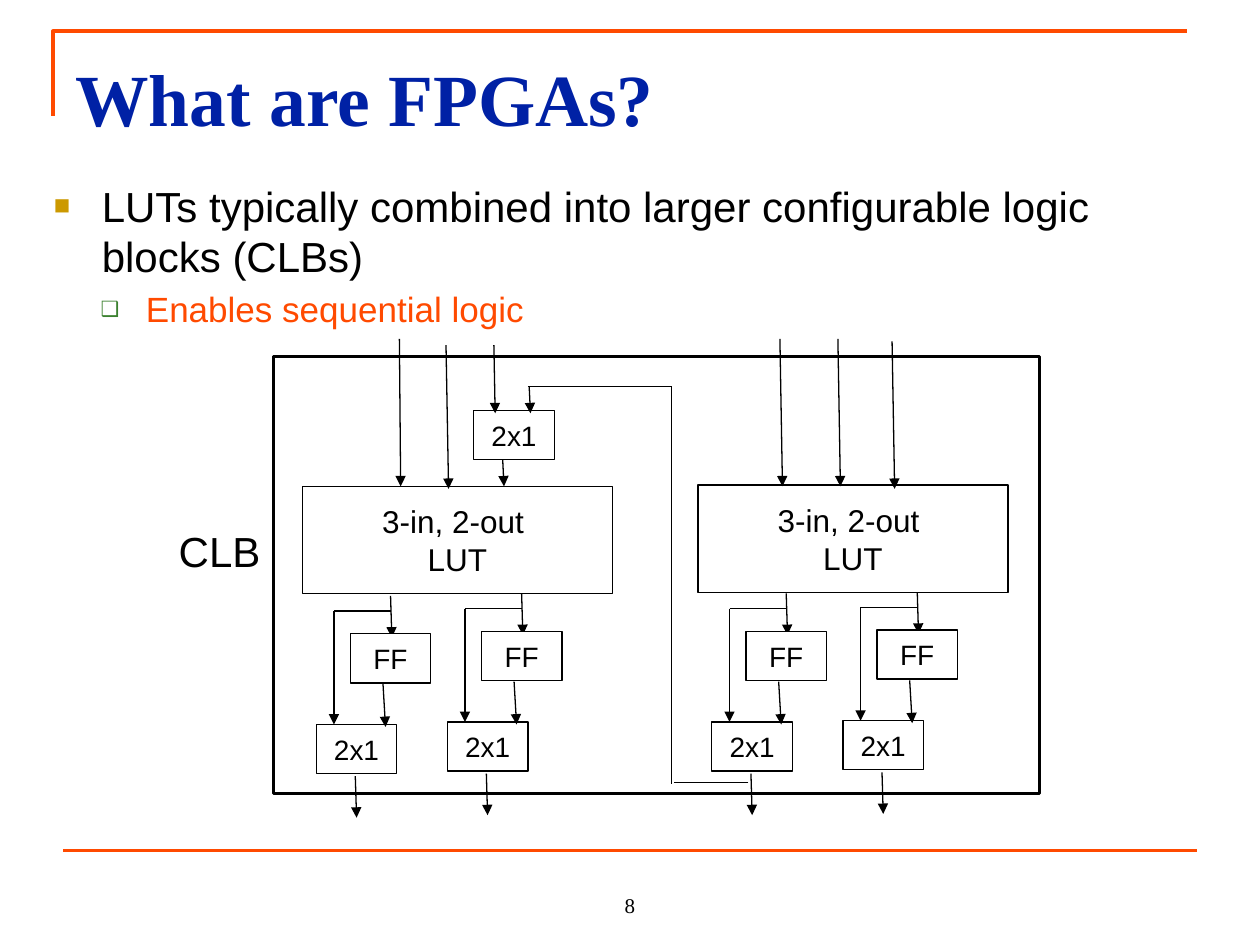
from typing import NamedTuple

from lxml import etree
from pptx import Presentation
from pptx import util as u
from pptx.dml.color import RGBColor
from pptx.enum import shapes, text
from pptx.oxml import ns

BLACK = RGBColor(0x00, 0x00, 0x00)
WHITE = RGBColor(0xFF, 0xFF, 0xFF)
ORANGE = RGBColor(0xFF, 0x4A, 0x00)
BLUE = RGBColor(0x00, 0x21, 0xA5)
GOLD = RGBColor(0xCC, 0x99, 0x00)
GREEN = RGBColor(0x3B, 0x81, 0x2F)

TITLE = {"name": "Times New Roman", "size": u.Pt(42), "bold": True}
BODY = {"name": "Arial", "size": u.Pt(24)}
DETAIL = {"name": "Arial", "size": u.Pt(20)}
LUT_FONT = {"name": "Arial", "size": u.Pt(18)}
BLOCK_FONT = {"name": "Arial", "size": u.Pt(16)}
NUMBER = {"name": "Times New Roman", "size": u.Pt(12)}

BLOCK_SIZE = (0.64, 0.39)
LUT_SIZE = (2.46, 0.85)


class Wire(NamedTuple):
    x1: float
    y1: float
    x2: float
    y2: float
    arrow: bool = True


class Bullet(NamedTuple):
    words: str
    font: dict
    color: RGBColor
    mark: str
    mark_color: RGBColor
    mark_percent: int
    margin: float
    indent: float
    level: int
    before: float


BULLETS = [
    Bullet("LUTs typically combined into larger configurable logic blocks (CLBs)",
           BODY, BLACK, "■", GOLD, 65, 0.38, -0.38, 0, 0),
    Bullet("Enables sequential logic",
           DETAIL, ORANGE, "❑", GREEN, 60, 0.73, -0.36, 1, 4),
]

# Top left corners of the look-up tables and of the flip-flop stages
LUTS = [(2.4, 3.86), (5.54, 3.85)]
STAGES = [(2.78, 5.03), (3.82, 5.01), (5.92, 5.01), (6.96, 5.0)]

# Wires of one stage, measured from its flip-flop's corner
STAGE_INPUT = Wire(0.32, -0.3, 0.33, 0.03)
STAGE_WIRES = [
    Wire(-0.13, -0.18, -0.13, 0.72),
    Wire(-0.13, -0.18, 0.32, -0.18, False),
    Wire(0.26, 0.4, 0.28, 0.74),
    Wire(0.04, 1.13, 0.05, 1.46),
]
INPUT_WIRES = [
    Wire(3.17, 2.69, 3.18, 3.86),
    Wire(3.54, 2.74, 3.56, 3.88),
    Wire(3.92, 2.74, 3.93, 3.28),
    Wire(3.99, 3.65, 4, 3.86),
    Wire(6.19, 2.69, 6.21, 3.86),
    Wire(6.65, 2.69, 6.67, 3.86),
    Wire(7.08, 2.71, 7.1, 3.88),
]
FEEDBACK_WIRES = [
    Wire(5.94, 6.21, 5.35, 6.21, False),
    Wire(5.33, 3.07, 5.33, 6.22, False),
    Wire(4.19, 3.07, 5.33, 3.07, False),
    Wire(4.2, 3.07, 4.21, 3.28),
]


def apply(target, values: dict) -> None:
    for name, value in values.items():
        setattr(target, name, value)


def write(para, words: str, font: dict, color: RGBColor) -> None:
    span = para.add_run()
    span.text = words
    apply(span.font, font)
    span.font.color.rgb = color


def add_text_box(page, left: float, top: float, width: float, height: float, **values):
    box = page.shapes.add_textbox(*map(u.Inches, (left, top, width, height)))
    apply(box.text_frame, {"word_wrap": True, **values})
    return box.text_frame


def add_bullet(para, item: Bullet) -> None:
    props = para._p.get_or_add_pPr()
    props.set("marL", str(u.Inches(item.margin)))
    props.set("indent", str(u.Inches(item.indent)))
    color = etree.SubElement(props, ns.qn("a:buClr"))
    etree.SubElement(color, ns.qn("a:srgbClr"), val=str(item.mark_color))
    etree.SubElement(props, ns.qn("a:buSzPct"), val=str(item.mark_percent * 1000))
    etree.SubElement(props, ns.qn("a:buFont"), typeface="Arial")
    etree.SubElement(props, ns.qn("a:buChar"), char=item.mark)
    apply(para, {"level": item.level, "space_before": u.Pt(item.before)})
    write(para, item.words, item.font, item.color)


def add_wire(page, wire: Wire, dx: float = 0, dy: float = 0,
             color: RGBColor = BLACK, weight: float = 0.75) -> None:
    ends = (wire.x1 + dx, wire.y1 + dy, wire.x2 + dx, wire.y2 + dy)
    line = page.shapes.add_connector(shapes.MSO_CONNECTOR.STRAIGHT, *map(u.Inches, ends))
    line.line.color.rgb = color
    line.line.width = u.Pt(weight)
    if wire.arrow:
        etree.SubElement(line.line._get_or_add_ln(), ns.qn("a:tailEnd"), type="triangle")
    etree.SubElement(line._element.spPr, ns.qn("a:effectLst"))


def add_block(page, corner: tuple, size: tuple, lines: tuple = (),
              font: dict = BLOCK_FONT, filled: bool = True, weight: float = 0.75) -> None:
    box = page.shapes.add_shape(shapes.MSO_SHAPE.RECTANGLE, *map(u.Inches, corner + size))
    box.shadow.inherit = False
    if filled:
        box.fill.solid()
        box.fill.fore_color.rgb = WHITE
    else:
        box.fill.background()
    box.line.color.rgb = BLACK
    box.line.width = u.Pt(weight)
    frame = box.text_frame
    apply(frame, {"word_wrap": False, "vertical_anchor": text.MSO_ANCHOR.MIDDLE})
    for index, words in enumerate(lines):
        para = frame.add_paragraph() if index else frame.paragraphs[0]
        para.alignment = text.PP_ALIGN.CENTER
        write(para, words, font, BLACK)


def add_stage(page, x: float, y: float) -> None:
    add_wire(page, STAGE_INPUT, x, y)
    add_block(page, (x, y), BLOCK_SIZE, ("FF",))
    add_block(page, (x - 0.27, y + 0.72), BLOCK_SIZE, ("2x1",))
    for wire in STAGE_WIRES:
        add_wire(page, wire, x, y)


def add_frame_lines(page) -> None:
    builder = page.shapes.build_freeform(u.Inches(0.42), u.Inches(0.92))
    builder.add_line_segments(
        [(u.Inches(0.42), u.Inches(0.25)), (u.Inches(9.42), u.Inches(0.25))], close=False)
    corner = builder.convert_to_shape()
    corner.shadow.inherit = False
    corner.fill.background()
    corner.line.color.rgb = ORANGE
    corner.line.width = u.Pt(2.25)
    add_wire(page, Wire(0.5, 6.75, 9.5, 6.75, False), color=ORANGE, weight=2.25)


def main() -> None:
    deck = Presentation()
    apply(deck, {"slide_width": u.Inches(10), "slide_height": u.Inches(7.5)})
    page = deck.slides.add_slide(deck.slide_layouts[6])
    add_frame_lines(page)

    # Title and bullets
    title = add_text_box(page, 0.5, 0.3, 9, 1.03, margin_top=u.Inches(0.12))
    write(title.paragraphs[0], "What are FPGAs?", TITLE, BLUE)
    body = add_text_box(page, 0.33, 1.33, 9.33, 1.36, margin_top=u.Inches(0.1))
    for index, item in enumerate(BULLETS):
        add_bullet(body.add_paragraph() if index else body.paragraphs[0], item)

    # Logic block diagram
    for corner in LUTS:
        add_block(page, corner, LUT_SIZE, ("3-in, 2-out ", "LUT"), LUT_FONT, filled=False)
    for x, y in STAGES:
        add_stage(page, x, y)
    add_block(page, (3.76, 3.26), BLOCK_SIZE, ("2x1",))
    for wire in INPUT_WIRES + FEEDBACK_WIRES:
        add_wire(page, wire)
    add_block(page, (2.17, 2.83), (6.08, 3.47), filled=False, weight=1.75)
    label = add_text_box(page, 1.32, 4.12, 1.15, 0.5)
    write(label.paragraphs[0], "CLB", BODY, BLACK)

    # Page number
    footer = add_text_box(page, 4, 6.83, 2, 0.5, vertical_anchor=text.MSO_ANCHOR.BOTTOM)
    footer.paragraphs[0].alignment = text.PP_ALIGN.CENTER
    write(footer.paragraphs[0], "8", NUMBER, BLACK)

    deck.save("out.pptx")


if __name__ == "__main__":
    main()
